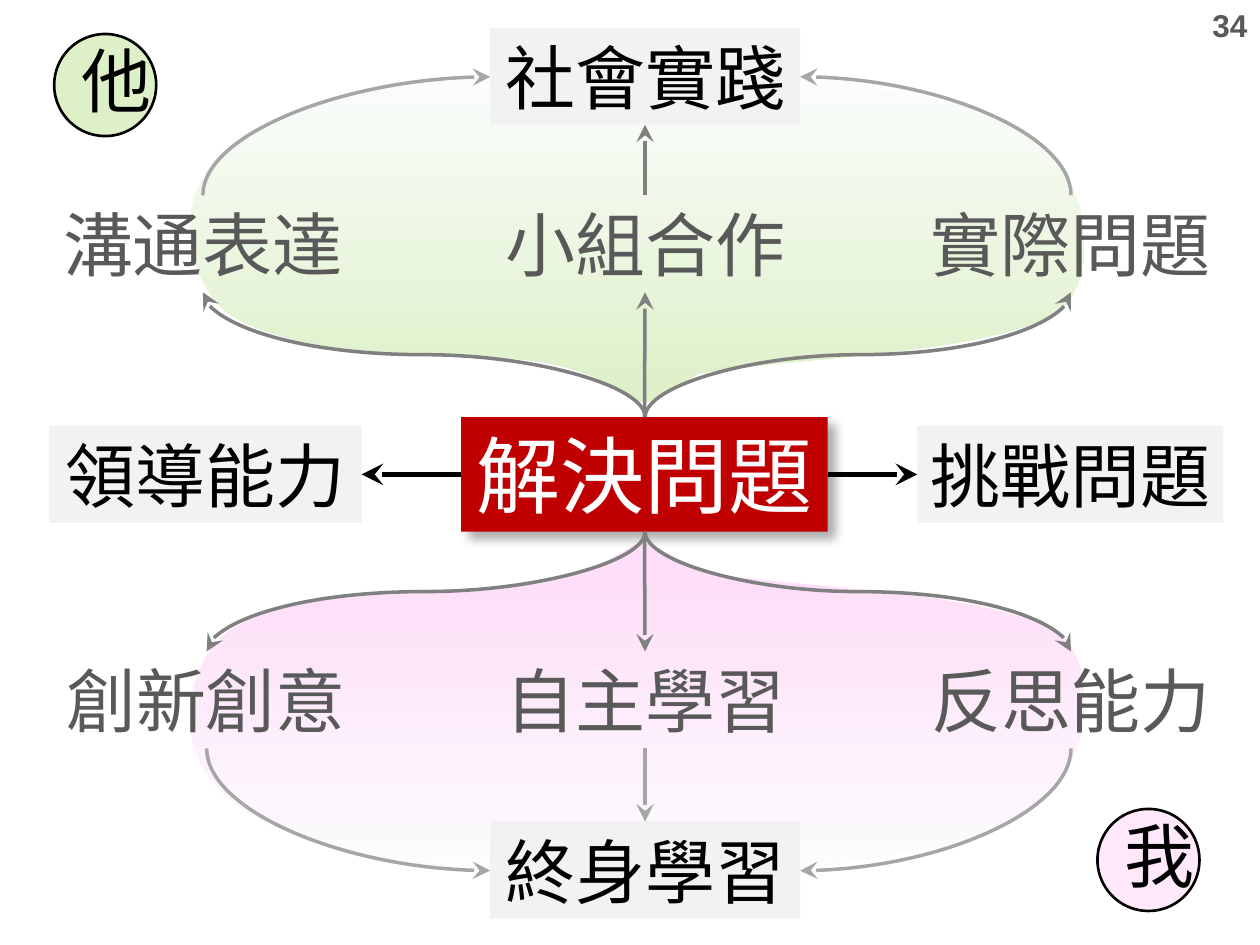
"""Build the problem-solving concept map with its social and personal halves."""
from lxml.etree import SubElement
from pptx import Presentation
from pptx.dml.color import RGBColor
from pptx.enum.shapes import MSO_CONNECTOR as Link, MSO_SHAPE as Shape
from pptx.enum.text import MSO_ANCHOR as Anchor, PP_ALIGN as Align
from pptx.oxml.ns import qn
from pptx.util import Pt

PX = 9144
WHITE = RGBColor(0xFF, 0xFF, 0xFF)
BLACK = RGBColor(0, 0, 0)
RED = RGBColor(0xC0, 0, 0)
PALE = RGBColor(0xF2, 0xF2, 0xF2)
SLATE = RGBColor(0x59, 0x59, 0x59)
GRAY = RGBColor(0x80, 0x80, 0x80)
SILVER = RGBColor(0xA6, 0xA6, 0xA6)
MIST = RGBColor(0xFC, 0xFD, 0xFE)
GREEN = RGBColor(0xDD, 0xF0, 0xC8)
PINK = RGBColor(0xFE, 0xDE, 0xF8)
ROSE = RGBColor(0xFE, 0xE8, 0xFA)
SC, JP = "Noto Sans CJK SC", "Noto Sans CJK JP"


def write(holder, words, size, font, color):
    paragraph = holder.text_frame.paragraphs[0]
    paragraph.alignment = Align.CENTER
    run = paragraph.add_run()
    run.text = words
    run.font.size, run.font.name = Pt(size), font
    run.font.color.rgb = color
    SubElement(run.font._element, qn("a:ea")).set("typeface", font)
    return paragraph


def finish_arrow(arrow, color, weight):
    arrow.line.color.rgb = color
    arrow.line.width = Pt(weight)
    SubElement(arrow.line._get_or_add_ln(), qn("a:tailEnd"), type="stealth", w="lg", len="lg")
    SubElement(arrow._element.spPr, qn("a:effectLst"))


deck = Presentation()
deck.slide_width, deck.slide_height = 1000 * PX, 750 * PX
slide = deck.slides.add_slide(deck.slide_layouts[6])
shapes = slide.shapes

petal_left, petal_top, petal_width, petal_height = 151, 53, 710, 266
petal_start = (493, 53)
petal_curves = [
    [(394, 56), (256, 67), (195, 107)],
    [(133, 146), (147, 212), (173, 241)],
    [(198, 270), (287, 282), (347, 282)],
    [(407, 283), (445, 286), (475, 301)],
    [(515, 321), (499, 330), (553, 297)],
    [(609, 284), (808, 282), (847, 241)],
    [(880, 193), (852, 112), (790, 92)],
    [(729, 71), (592, 51), (493, 53)],
]
for mirrored, stops in ((True, [(0.1, PINK), (1, MIST)]), (False, [(0, MIST), (1, GREEN)])):
    builder = shapes.build_freeform(0, 0, scale=PX)
    builder.add_line_segments([(petal_width, 0), (petal_width, petal_height)], close=True)
    petal = builder.convert_to_shape()
    petal.left = petal_left * PX
    petal.top = (750 - petal_top - petal_height if mirrored else petal_top) * PX
    outline = next(petal._element.iter(qn("a:path")))
    for segment in list(outline):
        outline.remove(segment)
    for tag, corners in [("a:moveTo", [petal_start])] + [("a:cubicBezTo", curve) for curve in petal_curves]:
        segment = SubElement(outline, qn(tag))
        for x, y in corners:
            depth = petal_top + petal_height - y if mirrored else y - petal_top
            SubElement(segment, qn("a:pt"), x=str(x - petal_left), y=str(depth))
    SubElement(outline, qn("a:close"))
    petal.shadow.inherit = False
    petal.line.fill.background()
    petal.fill.gradient()
    petal.fill.gradient_angle = 270
    for stop, (position, color) in zip(petal.fill.gradient_stops, stops):
        stop.position, stop.color.rgb = position, color

page_number = shapes.add_textbox(952 * PX, 0, 48 * PX, 40 * PX)
page_number.text_frame.word_wrap = False
write(page_number, "34", 18, "Arial", SLATE).runs[0].font.bold = True

topics = [
    ("解決問題", 366, 331, 291, 91, RED),
    ("自主學習", 389, 517, 246, 77, None),
    ("終身學習", 389, 652, 246, 77, PALE),
    ("小組合作", 389, 155, 246, 77, None),
    ("社會實踐", 389, 22, 246, 77, PALE),
    ("溝通表達", 35, 155, 252, 77, None),
    ("實際問題", 728, 155, 243, 77, None),
    ("反思能力", 728, 517, 244, 77, None),
    ("挑戰問題", 728, 338, 243, 77, PALE),
    ("領導能力", 39, 338, 248, 77, PALE),
    ("創新創意", 40, 517, 247, 77, None),
]
boxes = {}
for words, left, top, width, height, fill in topics:
    area = [edge * PX for edge in (left, top, width, height)]
    if fill is None:
        box = shapes.add_textbox(*area)
        font, ink = JP, SLATE
    else:
        box = shapes.add_shape(Shape.RECTANGLE, *area)
        box.shadow.inherit = False
        box.fill.solid()
        box.fill.fore_color.rgb = fill
        box.line.fill.background()
        font, ink = SC, WHITE if fill == RED else BLACK
    frame = box.text_frame
    frame.word_wrap = True
    frame.vertical_anchor = Anchor.MIDDLE
    frame.margin_top = frame.margin_bottom = 0
    write(box, words, 48 if fill == RED else 40, font, ink)
    boxes[words] = box

effects = boxes["解決問題"]._element.spPr.find(qn("a:effectLst"))
shadow = SubElement(effects, qn("a:outerShdw"), blurRad=str(Pt(6)), dist=str(Pt(6)), dir="2700000", algn="tl")
shade = SubElement(shadow, qn("a:srgbClr"), val="000000")
SubElement(shade, qn("a:alpha"), val="32000")

curves = [
    (512, 422, 850, 517, "curvedConnector3", GRAY),
    (512, 331, 850, 232, "curvedConnector3", GRAY),
    (512, 422, 164, 517, "curvedConnector3", GRAY),
    (512, 331, 161, 232, "curvedConnector3", GRAY),
    (850, 594, 635, 691, "curvedConnector2", SILVER),
    (164, 594, 389, 691, "curvedConnector2", SILVER),
    (161, 155, 389, 61, "curvedConnector2", SILVER),
    (850, 155, 635, 61, "curvedConnector2", SILVER),
]
for x1, y1, x2, y2, bend, color in curves:
    downward = y2 > y1
    run_length = abs(y2 - y1)
    drift = x1 - x2 if downward else x2 - x1
    mid_x, mid_y = (x1 + x2) / 2, (y1 + y2) / 2
    ends = (mid_x - run_length / 2, mid_y - drift / 2, mid_x + run_length / 2, mid_y + drift / 2)
    arrow = shapes.add_connector(Link.CURVE, *(int(end * PX) for end in ends))
    properties = arrow._element.spPr
    properties.find(qn("a:xfrm")).set("rot", str((90 if downward else 270) * 60000))
    properties.find(qn("a:prstGeom")).set("prst", bend)
    finish_arrow(arrow, color, 2)

straights = [
    ("解決問題", 0, "小組合作", 2, GRAY, 2),
    ("解決問題", 2, "自主學習", 0, GRAY, 2),
    ("自主學習", 2, "終身學習", 0, SILVER, 2),
    ("小組合作", 0, "社會實踐", 2, GRAY, 2),
    ("解決問題", 1, "領導能力", 3, BLACK, 2.5),
    ("解決問題", 3, "挑戰問題", 1, BLACK, 2.5),
]
for source, exit_side, target, entry_side, color, weight in straights:
    arrow = shapes.add_connector(Link.STRAIGHT, 0, 0, 0, 0)
    arrow.begin_connect(boxes[source], exit_side)
    arrow.end_connect(boxes[target], entry_side)
    finish_arrow(arrow, color, weight)

for words, left, top, fill in (("我", 871, 642, ROSE), ("他", 43, 27, GREEN)):
    badge = shapes.add_shape(Shape.OVAL, left * PX, top * PX, 81 * PX, 81 * PX)
    badge.shadow.inherit = False
    badge.fill.solid()
    badge.fill.fore_color.rgb = fill
    badge.line.color.rgb = BLACK
    badge.line.width = Pt(1.5)
    badge.text_frame.vertical_anchor = Anchor.MIDDLE
    write(badge, words, 40, JP, BLACK).line_spacing = 0.9

for outline in slide.shapes._spTree.iter(qn("a:path")):
    outline.set("w", str(petal_width))
    outline.set("h", str(petal_height))

deck.save("out.pptx")
